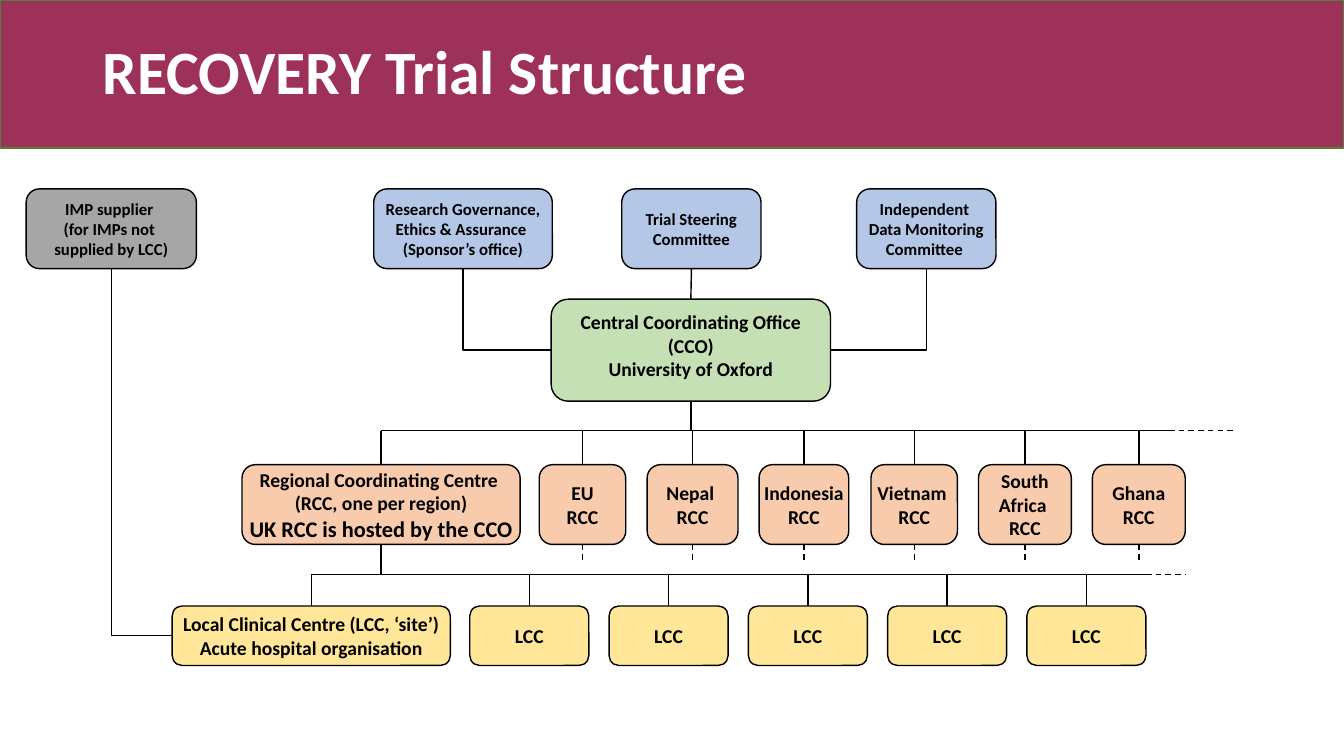
from lxml.etree import SubElement
from pptx import Presentation
from pptx.dml.color import RGBColor
from pptx.enum.dml import MSO_LINE
from pptx.enum.shapes import MSO_CONNECTOR, MSO_SHAPE
from pptx.enum.text import MSO_ANCHOR, PP_ALIGN
from pptx.oxml.ns import qn
from pptx.util import Cm, Pt

HUES = {
    "banner": "9E3159", "edge": "538035", "ink": "000000", "white": "FFFFFF",
    "grey": "A6A6A6", "blue": "B4C7E7", "green": "C5E0B4",
    "peach": "F8CBAD", "yellow": "FFE699",
}
FONT = {"name": "Calibri", "bold": True}
FRAME = {
    "word_wrap": True, "vertical_anchor": MSO_ANCHOR.MIDDLE,
    "margin_left": 0, "margin_right": 0, "margin_top": 0, "margin_bottom": 0,
}
TOP, LEFT, BOTTOM = 0, 1, 2
RIGHT = 3
RCC_BUS, LCC_BUS = 10.85, 14.48
TOP_ROW, RCC_ROW, LCC_ROW = 4.76, 11.71, 15.27
TALL, LOW = 2.01, 1.5


def hue(name):
    return RGBColor.from_string(HUES[name])


def apply(item, values):
    for key, value in values.items():
        setattr(item, key, value)


def style(para, size, tint="ink"):
    for run in para.runs:
        apply(run.font, {**FONT, "size": Pt(size)})
        run.font.color.rgb = hue(tint)


def shape(slide, kind, area, fill, edge):
    item = slide.shapes.add_shape(kind, *map(Cm, area))
    item.shadow.inherit = False
    item.fill.solid()
    item.fill.fore_color.rgb = hue(fill)
    item.line.color.rgb = hue(edge)
    item.line.width = Pt(1)
    return item


def box(slide, area, fill, text, size=14):
    item = shape(slide, MSO_SHAPE.ROUNDED_RECTANGLE, area, fill, "ink")
    frame = item.text_frame
    apply(frame, FRAME)
    frame.text = text
    for para in frame.paragraphs:
        para.alignment = PP_ALIGN.CENTER
        style(para, size)
    return item


def line(slide, start, end, dash=False, kind=MSO_CONNECTOR.STRAIGHT):
    item = slide.shapes.add_connector(kind, *start, *end)
    item.line.color.rgb = hue("ink")
    item.line.width = Pt(1)
    if dash:
        item.line.dash_style = MSO_LINE.DASH
    SubElement(item.element.spPr, qn("a:effectLst"))
    return item


def stem(slide, item, side, level, dash=False):
    """Join the top or bottom of a box to a height on the slide."""
    mid = item.left + item.width // 2
    edge = item.top if side == TOP else item.top + item.height
    link = line(slide, (mid, edge), (mid, level), dash)
    link.begin_connect(item, side)


def elbow(slide, item, side, upper):
    """Run sideways out of one box, then up to the bottom of another."""
    start = (item.left + (item.width if side == RIGHT else 0),
             item.top + item.height // 2)
    end = (upper.left + upper.width // 2, upper.top + upper.height)
    link = line(slide, start, end, kind=MSO_CONNECTOR.ELBOW)
    link.element.spPr.find(qn("a:prstGeom")).set("prst", "bentConnector2")
    link.begin_connect(item, side)
    link.end_connect(upper, BOTTOM)


def bus(slide, level, start, stop, tail):
    """A level line that goes on as dashes."""
    for left, right, dash in ((start, stop, False), (stop, tail, True)):
        line(slide, (Cm(left), Cm(level)), (Cm(right), Cm(level)), dash)


def title(slide, text):
    shape(slide, MSO_SHAPE.RECTANGLE, (0, 0, 33.87, 3.73), "banner", "edge")
    area = (2.34, 0.05, 29.21, 3.68)
    frame = slide.shapes.add_textbox(*map(Cm, area)).text_frame
    apply(frame, {"word_wrap": True, "vertical_anchor": MSO_ANCHOR.MIDDLE})
    frame.text = text
    frame.paragraphs[0].line_spacing = 0.9
    style(frame.paragraphs[0], 44, "white")


def main():
    deck = Presentation()
    deck.slide_width, deck.slide_height = Cm(33.87), Cm(19.05)
    slide = deck.slides.add_slide(deck.slide_layouts[6])
    title(slide, "RECOVERY Trial Structure")

    # Supplier and oversight bodies
    heads = [
        (0.66, 4.29, "grey",
         "IMP supplier \n(for IMPs not \nsupplied by LCC)"),
        (9.42, 4.5, "blue",
         "Research Governance, Ethics & Assurance \n(Sponsor’s office)"),
        (15.67, 3.51, "blue", "Trial Steering Committee"),
        (21.59, 3.51, "blue",
         "Independent \nData Monitoring Committee "),
    ]
    supply, sponsor, steer, monitor = [
        box(slide, (left, TOP_ROW, width, TALL), fill, text, 12)
        for left, width, fill, text in heads]

    # Central office
    office = box(slide, (13.89, 7.54, 7.04, 2.57), "green",
                 "Central Coordinating Office (CCO)\nUniversity of Oxford")
    office.text_frame.margin_bottom = Cm(0.25)
    stem(slide, steer, BOTTOM, office.top)
    slide.shapes[-1].end_connect(office, TOP)
    elbow(slide, office, LEFT, sponsor)
    elbow(slide, office, RIGHT, monitor)
    stem(slide, office, BOTTOM, Cm(RCC_BUS))

    # Regional centres
    bus(slide, RCC_BUS, 9.6, 29.46, 31.14)
    region = box(slide, (6.1, RCC_ROW, 7.01, TALL), "peach",
                 "Regional Coordinating Centre \n(RCC, one per region)\n"
                 "UK RCC is hosted by the CCO")
    style(region.text_frame.paragraphs[-1], 16)
    stem(slide, region, TOP, Cm(RCC_BUS))
    stem(slide, region, BOTTOM, Cm(LCC_BUS))
    lands = [
        (13.59, 2.18, "EU\nRCC"), (16.31, 2.29, "Nepal \nRCC"),
        (19.13, 2.26, "Indonesia RCC"), (21.95, 2.18, "Vietnam \nRCC"),
        (24.66, 2.34, "South Africa \nRCC"), (27.53, 2.34, "Ghana\nRCC"),
    ]
    for left, width, text in lands:
        land = box(slide, (left, RCC_ROW, width, TALL), "peach", text)
        stem(slide, land, TOP, Cm(RCC_BUS))
        stem(slide, land, BOTTOM, Cm(RCC_ROW + TALL + 0.48), dash=True)

    # Local centres
    bus(slide, LCC_BUS, 7.84, 28.88, 29.87)
    site = box(slide, (4.34, LCC_ROW, 7.01, LOW), "yellow",
               "Local Clinical Centre (LCC, ‘site’)\n"
               "Acute hospital organisation")
    elbow(slide, site, LEFT, supply)
    local = [box(slide, (11.84 + 3.51 * i, LCC_ROW, 3, LOW), "yellow", "LCC")
             for i in range(5)]
    for item in [site, *local]:
        stem(slide, item, TOP, Cm(LCC_BUS))

    deck.save("out.pptx")


if __name__ == "__main__":
    main()
